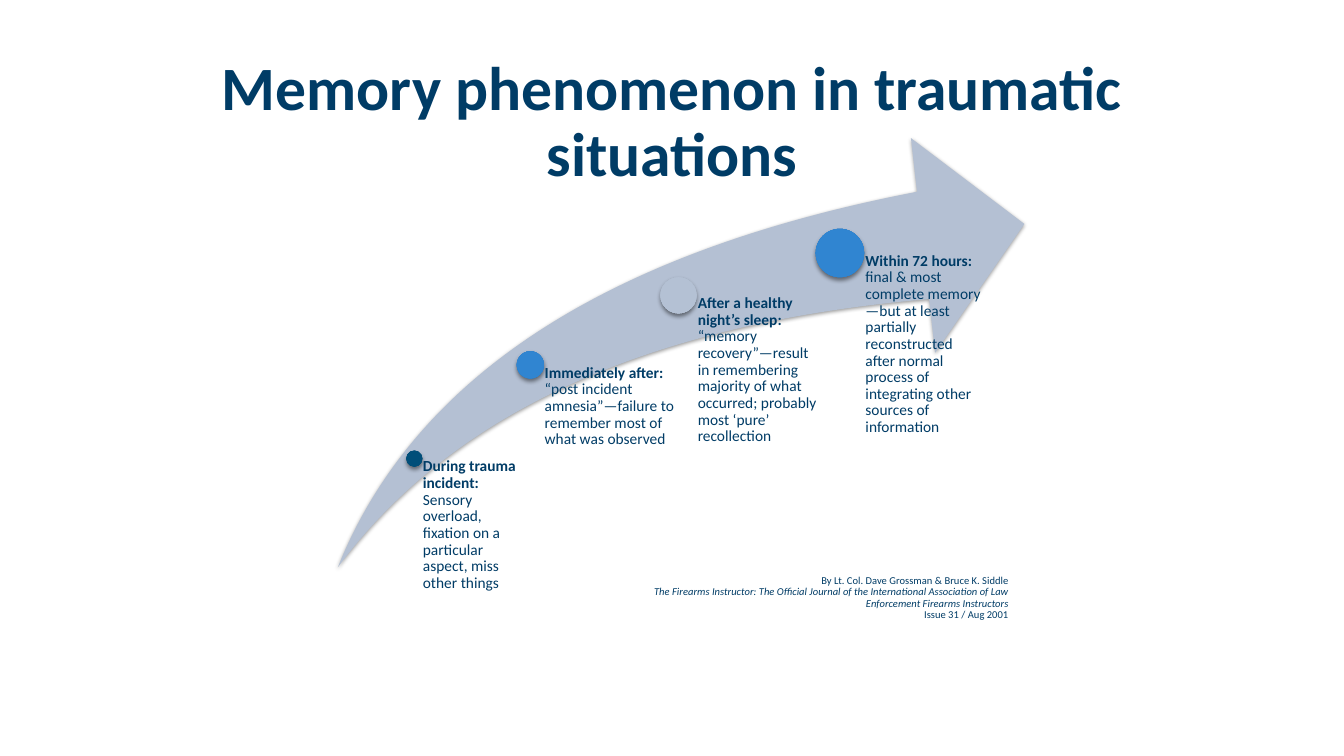
from dataclasses import dataclass

from lxml import etree
from pptx import Presentation
from pptx.dml.color import RGBColor
from pptx.enum.shapes import MSO_SHAPE as Shape
from pptx.enum.text import MSO_ANCHOR as Anchor, PP_ALIGN as Align
from pptx.oxml.ns import qn
from pptx.util import Inches, Pt


@dataclass(frozen=True)
class Theme:
    font: str = "Calibri"
    text: str = "003C66"
    arrow: str = "B4C0D3"
    navy: tuple = ("004E79", "004871")
    blue: tuple = ("3085D1", "2D7CC3")
    gray: tuple = ("B4C1D4", "A8B4C6")
    title_size: float = 44
    step_size: float = 11
    source_size: float = 7.5


THEME = Theme()

# Dot centre within the arrow's box, dot diameter, text width, dot colours, heading, detail
STEPS = [
    (0.76, 3.18, 0.16, 1.16, THEME.navy, "During trauma incident: ",
     "Sensory overload, fixation on a particular aspect, miss other things"),
    (1.91, 2.25, 0.27, 1.43, THEME.blue, "Immediately after: ",
     "“post incident amnesia”—failure to remember most of what was observed"),
    (3.38, 1.56, 0.36, 1.43, THEME.gray, "After a healthy night’s sleep: ",
     "“memory recovery”—result in remembering majority of what occurred; "
     "probably most ‘pure’ recollection"),
    (4.98, 1.14, 0.48, 1.43, THEME.blue, "Within 72 hours: ",
     "final & most complete memory—but at least partially reconstructed after "
     "normal process of integrating other sources of information"),
]


def add_span(para, text, size, bold=False, italic=False):
    span = para.add_run()
    span.text = text
    font = span.font
    font.name, font.size = THEME.font, Pt(size)
    font.bold, font.italic = bold, italic
    font.color.rgb = RGBColor.from_string(THEME.text)


def add_text_box(page, box, align=Align.LEFT, anchor=Anchor.TOP, insets=(0.1, 0.05, 0.1, 0.05)):
    """Add an empty wrapped text box and return its first paragraph."""
    frame = page.shapes.add_textbox(*map(Inches, box)).text_frame
    frame.word_wrap = True
    frame.vertical_anchor = anchor
    (frame.margin_left, frame.margin_top,
     frame.margin_right, frame.margin_bottom) = map(Inches, insets)
    para = frame.paragraphs[0]
    para.alignment = align
    para.line_spacing = 0.9
    return para


def add_shadowed_shape(page, kind, box, opacity, distance):
    """Add a shape without outline that casts a soft shadow downwards."""
    shape = page.shapes.add_shape(kind, *map(Inches, box))
    shape.line.fill.background()
    shape.shadow.inherit = False
    effects = shape._element.spPr.find(qn("a:effectLst"))
    shadow = etree.SubElement(effects, qn("a:outerShdw"), blurRad=str(Pt(3)),
                              dist=str(Pt(distance)), dir="5400000", rotWithShape="0")
    color = etree.SubElement(shadow, qn("a:srgbClr"), val="000000")
    etree.SubElement(color, qn("a:alpha"), val=str(opacity * 1000))
    return shape


def fill_radial(shape, colors):
    shape.fill.gradient()
    for stop, position, color in zip(shape.fill.gradient_stops, (0.9, 1), colors):
        stop.position = position
        stop.color.rgb = RGBColor.from_string(color)
    gradient = shape._element.spPr.find(qn("a:gradFill"))
    gradient.remove(gradient.find(qn("a:lin")))
    circle = etree.SubElement(gradient, qn("a:path"), path="circle")
    etree.SubElement(circle, qn("a:fillToRect"), {side: "100000" for side in "ltrb"})


def add_title(page, box):
    para = add_text_box(page, box, Align.CENTER, Anchor.MIDDLE)
    add_span(para, "Memory phenomenon in traumatic situations", THEME.title_size, bold=True)


def add_timeline(page, box):
    left, top, width, height = box
    arrow = add_shadowed_shape(page, Shape.SWOOSH_ARROW, box, opacity=40, distance=1.4)
    arrow.adjustments[0] = arrow.adjustments[1] = 0.25
    arrow.fill.solid()
    arrow.fill.fore_color.rgb = RGBColor.from_string(THEME.arrow)
    for across, down, diameter, text_width, colors, heading, detail in STEPS:
        center_x, center_y, radius = left + across, top + down, diameter / 2
        dot_box = (center_x - radius, center_y - radius, diameter, diameter)
        dot = add_shadowed_shape(page, Shape.OVAL, dot_box, opacity=45, distance=2)
        fill_radial(dot, colors)
        text_box = (center_x, center_y, text_width, top + height - center_y)
        para = add_text_box(page, text_box, insets=(radius * 1.06, 0, 0, 0))
        add_span(para, heading, THEME.step_size, bold=True)
        add_span(para, detail, THEME.step_size)


def add_source(page, box):
    para = add_text_box(page, box, Align.RIGHT)
    add_span(para, "By Lt. Col. Dave Grossman & Bruce K. Siddle", THEME.source_size)
    para.add_line_break()
    add_span(para, "The Firearms Instructor: The Official Journal of the International "
             "Association of Law Enforcement Firearms Instructors",
             THEME.source_size, italic=True)
    para.add_line_break()
    add_span(para, "Issue 31 / Aug 2001", THEME.source_size)


def main():
    deck = Presentation()
    deck.slide_width, deck.slide_height = Inches(13.33), Inches(7.5)
    page = deck.slides.add_slide(deck.slide_layouts[6])
    add_title(page, (0.92, 0.5, 11.5, 1.45))
    add_timeline(page, (3.35, 1.37, 6.81, 4.26))
    add_source(page, (6.1, 5.66, 4, 0.66))
    deck.save("out.pptx")


if __name__ == "__main__":
    main()
